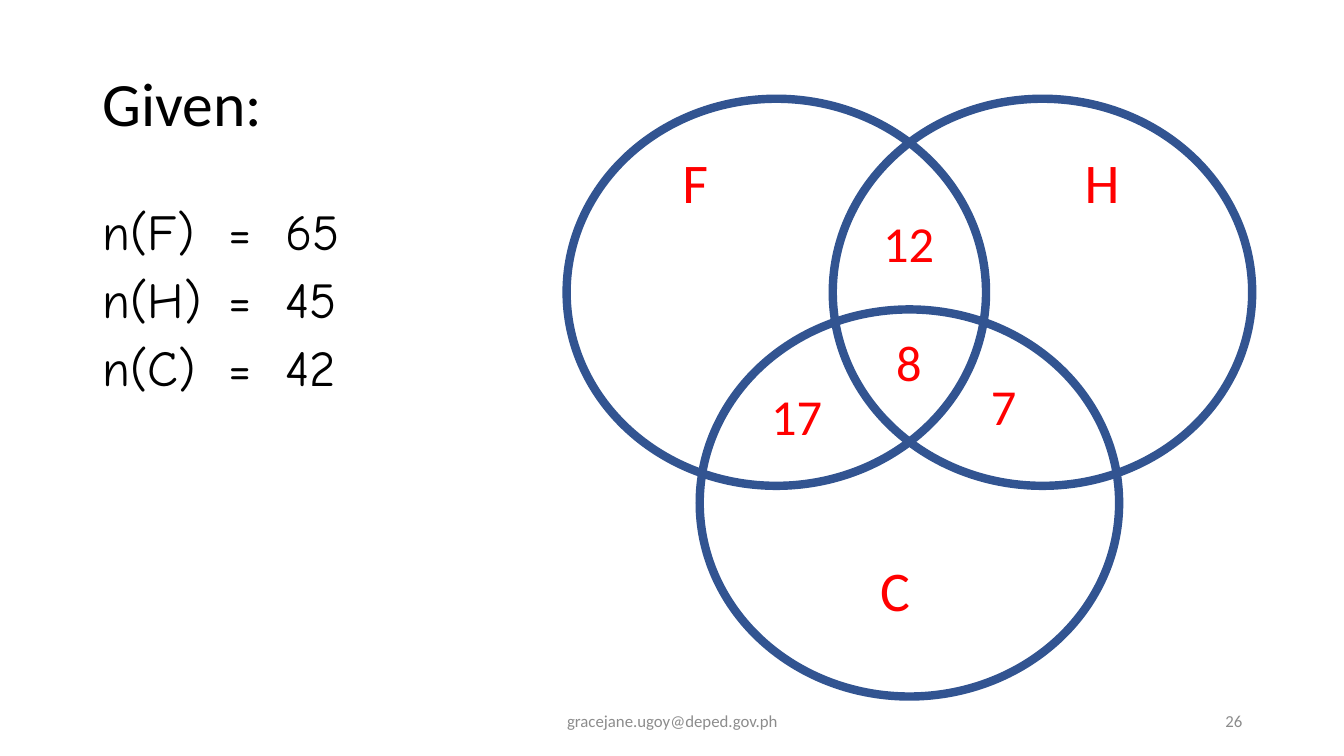
from lxml import etree
from pptx import Presentation
from pptx.dml.color import RGBColor
from pptx.enum.shapes import MSO_SHAPE
from pptx.enum.text import MSO_ANCHOR, PP_ALIGN
from pptx.oxml.ns import qn
from pptx.util import Inches, Pt

OVAL = MSO_SHAPE.OVAL
TOP, MIDDLE = MSO_ANCHOR.TOP, MSO_ANCHOR.MIDDLE
LEFT, CENTER, RIGHT = PP_ALIGN.LEFT, PP_ALIGN.CENTER, PP_ALIGN.RIGHT

BLACK, RED, GREY, BLUE = "000000", "FF0000", "8C8C8C", "325491"
CIRCLE_SIZE = (4.16, 3.84)
CIRCLES = [(5.62, 0.98), (8.26, 0.98), (6.94, 3.07)]
SET_NAMES = [("F", 6.67, 1.41, 0.46), ("H", 10.66, 1.41, 0.55), ("C", 8.63, 5.46, 0.5)]
COUNTS = [("8", 8.79, 3.24, 0.46), ("12", 8.66, 2.05, 0.71),
          ("17", 7.55, 3.77, 0.71), ("7", 9.73, 3.67, 0.46)]
SET_SIZES = [("n(F)", "65"), ("n(H)", "45"), ("n(C)", "42")]
EQUATION_TABS = [1.25, 1.81]


def color(hex_value):
    return RGBColor.from_string(hex_value)


def add_text(page, place, lines, size, hex_color, font="Calibri", anchor=TOP,
             wrap=True, **para_format):
    """Add a text box with one paragraph per line and return its paragraphs."""
    box = page.shapes.add_textbox(*map(Inches, place))
    frame = box.text_frame
    frame.word_wrap = wrap
    frame.vertical_anchor = anchor
    frame.text = "\n".join(lines)
    for para in frame.paragraphs:
        for name, value in para_format.items():
            setattr(para, name, value)
        for span in para.runs:
            for name, value in {"name": font, "size": Pt(size)}.items():
                setattr(span.font, name, value)
            span.font.color.rgb = color(hex_color)
    return frame.paragraphs


def set_tabs(para, positions):
    properties = para._p.get_or_add_pPr()
    tabs = etree.SubElement(properties, qn("a:tabLst"))
    for position in positions:
        etree.SubElement(tabs, qn("a:tab"), pos=str(Inches(position)), algn="l")


def add_circle(page, left, top):
    circle = page.shapes.add_shape(OVAL, *map(Inches, (left, top, *CIRCLE_SIZE)))
    circle.shadow.inherit = False
    circle.fill.background()
    circle.line.color.rgb = color(BLUE)
    circle.line.width = Pt(6)


def add_labels(page, labels, size, height):
    for text, left, top, width in labels:
        add_text(page, (left, top, width, height), [text], size, RED, wrap=False)


def main():
    deck = Presentation()
    deck.slide_width, deck.slide_height = Inches(13.33), Inches(7.5)
    page = deck.slides.add_slide(deck.slide_layouts[6])

    add_text(page, (0.92, 0.4, 11.5, 1.32), ["Given:"], 44, BLACK,
             anchor=MIDDLE, line_spacing=0.9)
    equations = [f"{name}\t=\t{count}" for name, count in SET_SIZES]
    for para in add_text(page, (0.92, 2, 11.5, 4.76), equations, 36, BLACK,
                         font="Comic Neue", alignment=LEFT,
                         line_spacing=0.9, space_before=Pt(10)):
        set_tabs(para, EQUATION_TABS)

    for left, top in CIRCLES:
        add_circle(page, left, top)
    add_labels(page, SET_NAMES, 40, 0.77)
    add_labels(page, COUNTS, 36, 0.71)

    add_text(page, (4.42, 6.95, 4.5, 0.4), ["gracejane.ugoy@deped.gov.ph"], 12, GREY,
             anchor=MIDDLE, alignment=CENTER)
    add_text(page, (9.42, 6.95, 3, 0.4), ["26"], 12, GREY,
             anchor=MIDDLE, alignment=RIGHT)
    deck.save("out.pptx")


if __name__ == "__main__":
    main()
